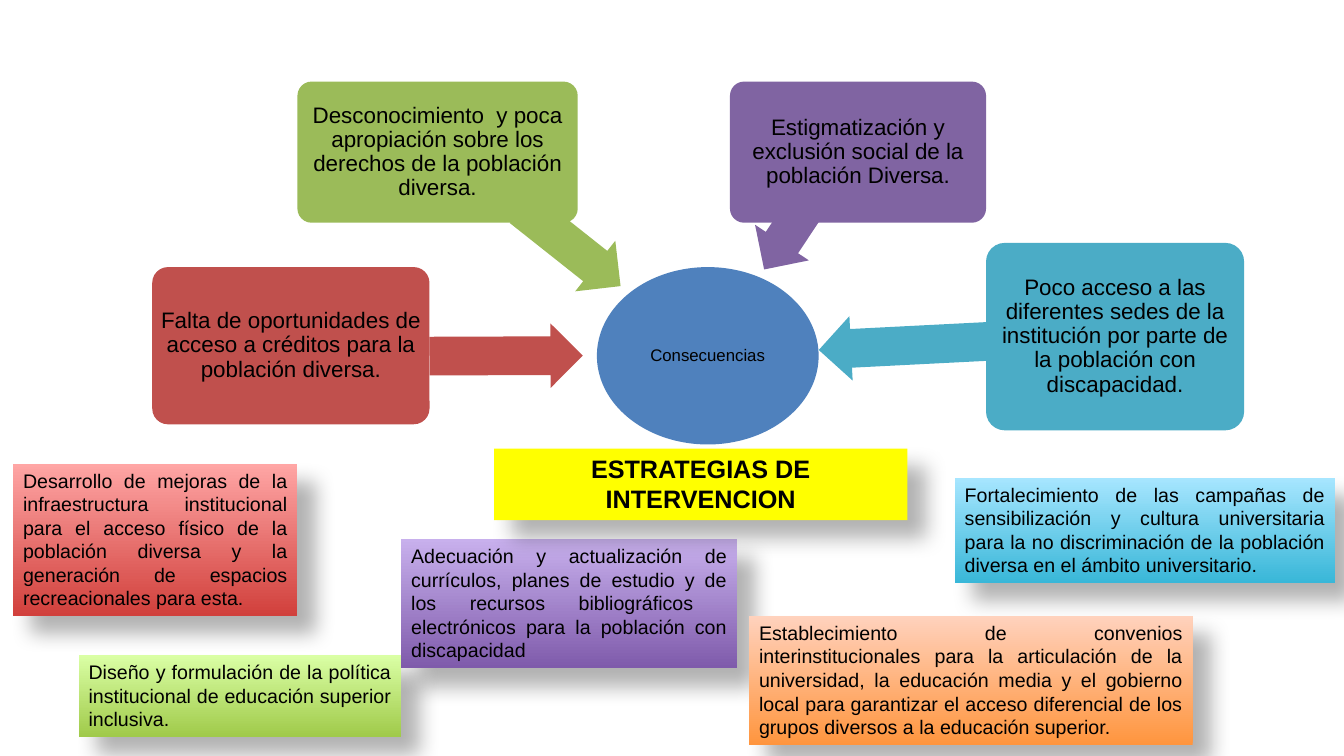
from lxml import etree
from pptx import Presentation
from pptx.dml.color import RGBColor
from pptx.enum.shapes import MSO_SHAPE
from pptx.enum.text import MSO_ANCHOR, MSO_AUTO_SIZE, PP_ALIGN
from pptx.oxml.ns import qn
from pptx.util import Inches, Pt

RECTANGLE = MSO_SHAPE.RECTANGLE
ROUNDED = MSO_SHAPE.ROUNDED_RECTANGLE
OVAL = MSO_SHAPE.OVAL
LEFT_ARROW = MSO_SHAPE.LEFT_ARROW
CENTER, JUSTIFY = PP_ALIGN.CENTER, PP_ALIGN.JUSTIFY
TOP, MIDDLE = MSO_ANCHOR.TOP, MSO_ANCHOR.MIDDLE
FIT_SHAPE = MSO_AUTO_SIZE.SHAPE_TO_FIT_TEXT

BLACK = RGBColor(0x00, 0x00, 0x00)
BLUE = RGBColor(0x4F, 0x81, 0xBD)
RED = RGBColor(0xC0, 0x50, 0x4D)
GREEN = RGBColor(0x9B, 0xBB, 0x59)
PURPLE = RGBColor(0x80, 0x64, 0xA2)
TEAL = RGBColor(0x4B, 0xAC, 0xC6)
YELLOW = RGBColor(0xFF, 0xFF, 0x00)
RED_GRADIENT = RGBColor(0xD1, 0x40, 0x3C), RGBColor(0xFF, 0xA6, 0xA5)
GREEN_GRADIENT = RGBColor(0xA0, 0xCA, 0x4A), RGBColor(0xDA, 0xFF, 0xA5)
PURPLE_GRADIENT = RGBColor(0x7F, 0x5B, 0xAB), RGBColor(0xC8, 0xB0, 0xED)
SKY_GRADIENT = RGBColor(0x39, 0xB7, 0xD8), RGBColor(0xA7, 0xE6, 0xFF)
ORANGE_GRADIENT = RGBColor(0xFF, 0x95, 0x3E), RGBColor(0xFF, 0xD2, 0xBD)

# Each cause: colour, box, arrow box, arrow rotation, text
CAUSES = [
    (RED, (1.51, 2.65, 2.75, 1.56), (4.26, 3.21, 1.52, 0.64), 179.8,
     "Falta de oportunidades de acceso a créditos para la población diversa."),
    (GREEN, (2.95, 0.81, 2.78, 1.4), (5.04, 2.13, 1.25, 0.64), 218.4,
     "Desconocimiento  y poca apropiación sobre los derechos de la población diversa."),
    (PURPLE, (7.24, 0.81, 2.54, 1.4), (7.4, 2.02, 0.8, 0.64), 303.5,
     "Estigmatización y exclusión social de la población Diversa."),
    (TEAL, (9.78, 2.41, 2.56, 1.86), (8.12, 3.11, 1.67, 0.64), 357.1,
     "Poco acceso a las diferentes sedes de la institución por parte de la "
     "población con discapacidad."),
]

# Each strategy: gradient from bottom to top, box, text
STRATEGIES = [
    (RED_GRADIENT, (0.13, 4.6, 2.82, 1.51),
     "Desarrollo de mejoras de la infraestructura institucional para el acceso físico "
     "de la población diversa y la generación de espacios recreacionales para esta."),
    (GREEN_GRADIENT, (0.78, 6.5, 3.2, 0.81),
     "Diseño y formulación de la política institucional de educación superior inclusiva."),
    (PURPLE_GRADIENT, (3.98, 5.35, 3.33, 1.28),
     "Adecuación y actualización de currículos, planes de estudio y de los recursos "
     "bibliográficos  electrónicos para la población con discapacidad"),
    (SKY_GRADIENT, (9.47, 4.74, 3.77, 1.04),
     "Fortalecimiento de las campañas de sensibilización y cultura universitaria para "
     "la no discriminación de la población diversa en el ámbito universitario."),
    (ORANGE_GRADIENT, (7.43, 6.11, 4.4, 1.28),
     "Establecimiento de convenios interinstitucionales para la articulación de la "
     "universidad, la educación media y el gobierno local para garantizar el acceso "
     "diferencial de los grupos diversos a la educación superior."),
]


class SlideBuilder:
    font_name = "Arial"

    def __init__(self, slide):
        self.slide = slide

    def shape(self, kind, box, color):
        shape = self.slide.shapes.add_shape(kind, *(Inches(length) for length in box))
        shape.shadow.inherit = False
        shape.fill.solid()
        shape.fill.fore_color.rgb = color
        shape.line.fill.background()
        return shape

    def text(self, shape, text, size, alignment=CENTER, bold=False):
        frame = shape.text_frame
        frame.word_wrap = True
        paragraph = frame.paragraphs[0]
        paragraph.alignment = alignment
        run = paragraph.add_run()
        run.text = text
        run.font.name = self.font_name
        run.font.size = Pt(size)
        run.font.bold = bold
        run.font.color.rgb = BLACK
        return paragraph

    def node(self, kind, box, color, text, size, inset):
        """Add a diagram shape with tight, vertically centred text."""
        shape = self.shape(kind, box, color)
        if kind == ROUNDED:
            shape.adjustments[0] = 0.1
        frame = shape.text_frame
        frame.margin_left = frame.margin_right = Inches(inset)
        frame.margin_top = frame.margin_bottom = Inches(inset)
        frame.vertical_anchor = MIDDLE
        self.text(shape, text, size).line_spacing = 0.9

    def arrow(self, box, color, rotation):
        shape = self.shape(LEFT_ARROW, box, color)
        shape.adjustments[0] = 0.6
        shape.adjustments[1] = 0.5
        shape.rotation = rotation

    def card(self, box, color, text, size, alignment, bold=False):
        """Add a text rectangle with a soft shadow."""
        shape = self.shape(RECTANGLE, box, color)
        shape.text_frame.auto_size = FIT_SHAPE
        shape.text_frame.vertical_anchor = TOP
        self.text(shape, text, size, alignment, bold)
        effects = shape._element.spPr.find(qn("a:effectLst"))
        shadow = etree.SubElement(
            effects, qn("a:outerShdw"), blurRad=str(Pt(15)), dist=str(Pt(18)),
            dir="2700000", algn="tl", rotWithShape="0")
        shade = etree.SubElement(shadow, qn("a:srgbClr"), val=str(BLACK))
        etree.SubElement(shade, qn("a:alpha"), val="30000")
        return shape

    def gradient_card(self, box, gradient, text):
        shape = self.card(box, gradient[0], text, 14, JUSTIFY)
        shape.fill.gradient()
        shape.fill.gradient_angle = 90
        for stop, color in zip(shape.fill.gradient_stops, gradient):
            stop.color.rgb = color


def main():
    presentation = Presentation()
    presentation.slide_width = Inches(13.33)
    presentation.slide_height = Inches(7.5)
    builder = SlideBuilder(presentation.slides.add_slide(presentation.slide_layouts[6]))

    builder.node(OVAL, (5.92, 2.65, 2.2, 1.76), BLUE, "Consecuencias", 12, 0.01)
    for color, box, arrow_box, rotation, text in CAUSES:
        builder.arrow(arrow_box, color, rotation)
        builder.node(ROUNDED, box, color, text, 16, 0.04)
    for gradient, box, text in STRATEGIES:
        builder.gradient_card(box, gradient, text)
    builder.card((4.9, 4.45, 4.1, 0.71), YELLOW, "ESTRATEGIAS DE INTERVENCION",
                 18, CENTER, bold=True)

    presentation.save("out.pptx")


if __name__ == "__main__":
    main()
